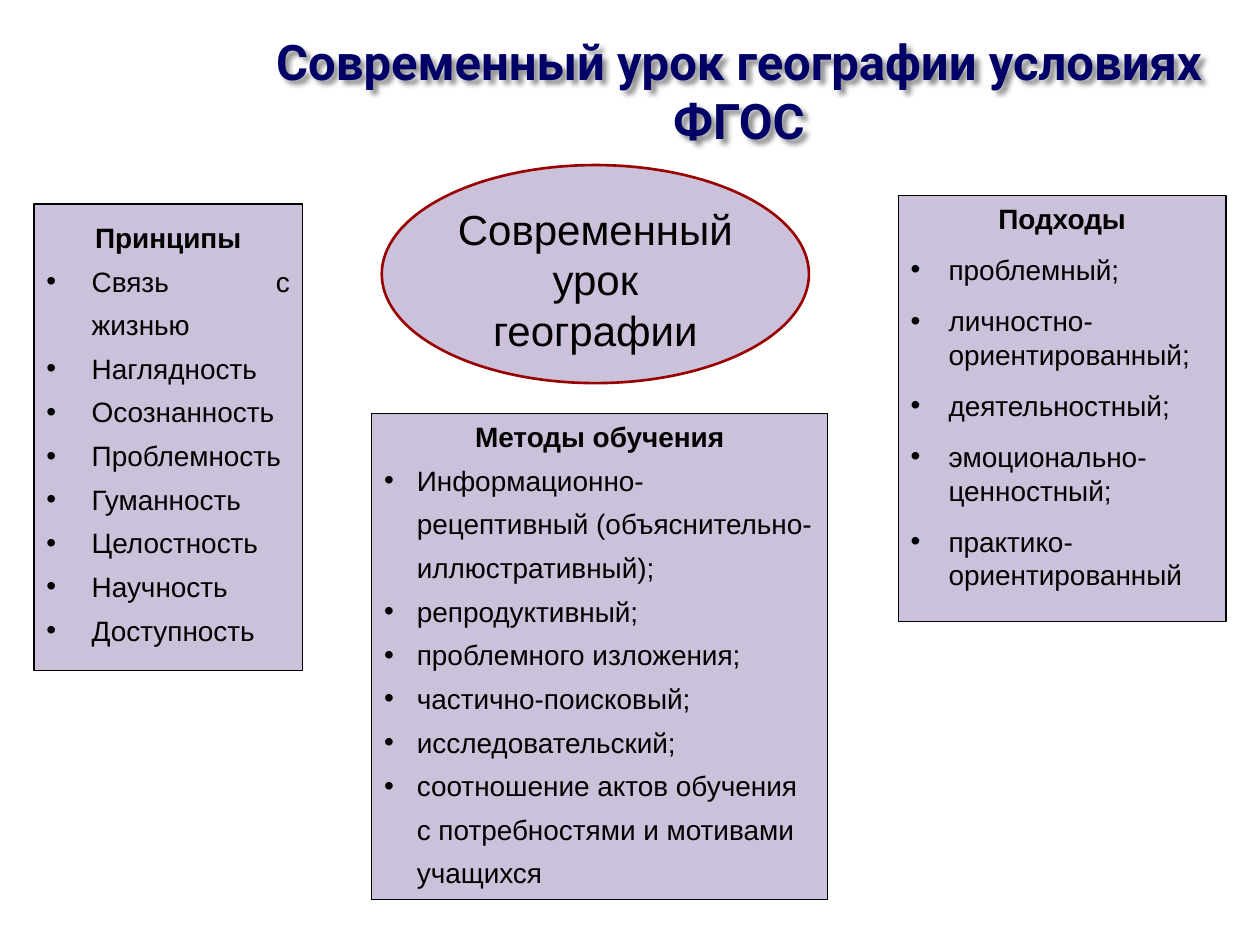
from lxml.etree import SubElement
from pptx import Presentation
from pptx.dml.color import RGBColor
from pptx.enum.shapes import MSO_SHAPE as Shape
from pptx.enum.text import MSO_ANCHOR as Anchor, PP_ALIGN as Align
from pptx.oxml.ns import qn
from pptx.util import Inches, Pt

THEME = {
    "title": RGBColor(0x00, 0x00, 0x66),
    "text": RGBColor(0x00, 0x00, 0x00),
    "panel": RGBColor(0xCC, 0xC1, 0xDA),
    "accent": RGBColor(0x99, 0x00, 0x00),
    "title_size": 28, "topic_size": 24, "body_size": 16,
    "title_font": "Roboto", "body_font": "Arial",
}

presentation = Presentation()
presentation.slide_width, presentation.slide_height = Inches(10), Inches(7.5)
column = presentation.slide_width / 100
row = presentation.slide_height / 100
slide = presentation.slides.add_slide(presentation.slide_layouts[6])


def write_text(paragraph, text, size=THEME["body_size"], font=THEME["body_font"],
               color=THEME["text"], bold=False, align=Align.LEFT,
               line_spacing=None, space_after=None, hanging=None):
    """Fill a paragraph; a hanging indent in inches makes it a bulleted one."""
    paragraph.alignment = align
    paragraph.line_spacing = line_spacing
    if space_after is not None:
        paragraph.space_after = Pt(space_after)
    if hanging:
        properties = paragraph._p.get_or_add_pPr()
        properties.set("marL", str(Inches(hanging)))
        properties.set("indent", str(-Inches(hanging)))
        SubElement(properties, qn("a:buFont"), typeface="Arial")
        SubElement(properties, qn("a:buChar"), char="•")
    run = paragraph.add_run()
    run.text = text
    run.font.size, run.font.bold = Pt(size), bold
    run.font.color.rgb = color
    run.font.name = font


def add_panel(kind, left, top, width, height, line_color, line_width):
    """Place a filled shape, measured in percent of the slide's sides."""
    shape = slide.shapes.add_shape(kind, int(left * column), int(top * row),
                                   int(width * column), int(height * row))
    shape.shadow.inherit = False
    shape.fill.solid()
    shape.fill.fore_color.rgb = THEME["panel"]
    shape.line.color.rgb = line_color
    shape.line.width = Pt(line_width)
    shape.text_frame.word_wrap = True
    shape.text_frame.vertical_anchor = Anchor.TOP
    return shape.text_frame


# Title with a soft shadow
title = slide.shapes.add_textbox(int(17.3 * column), int(3.73 * row),
                                 int(82.7 * column), int(11.6 * row))
title.text_frame.word_wrap = True
title.text_frame.vertical_anchor = Anchor.MIDDLE
write_text(title.text_frame.paragraphs[0], "Современный урок географии условиях ФГОС",
           size=THEME["title_size"], font=THEME["title_font"],
           color=THEME["title"], bold=True, align=Align.CENTER)
effects = SubElement(title._element.spPr, qn("a:effectLst"))
shadow = SubElement(effects, qn("a:outerShdw"), blurRad=str(Pt(3)), dist=str(Pt(3)),
                    dir="2700000", algn="tl", rotWithShape="0")
shadow_color = SubElement(shadow, qn("a:srgbClr"), val="000000")
SubElement(shadow_color, qn("a:alpha"), val="43000")

# Central topic
topic = add_panel(Shape.OVAL, 30.3, 17.47, 33.9, 23.07, THEME["accent"], 1.5)
write_text(topic.paragraphs[0], "Современный урок географии",
           size=THEME["topic_size"], align=Align.CENTER)

# Cards: heading, place, heading format, item format, items
cards = [
    ("Принципы", (2.7, 21.6, 21.3, 49.33),
     {"line_spacing": 1.3}, {"line_spacing": 1.3, "hanging": 0.36},
     ["Связь с жизнью", "Наглядность", "Осознанность", "Проблемность",
      "Гуманность", "Целостность", "Научность", "Доступность"]),
    ("Методы обучения", (29.5, 43.73, 36.2, 51.47),
     {}, {"line_spacing": 1.3, "hanging": 0.26},
     ["Информационно-рецептивный (объяснительно-иллюстративный);",
      "репродуктивный;", "проблемного изложения;", "частично-поисковый;",
      "исследовательский;",
      "соотношение актов обучения с потребностями и мотивами учащихся"]),
    ("Подходы", (71.3, 20.67, 26, 45.07),
     {"space_after": 10}, {"space_after": 10, "hanging": 0.3},
     ["проблемный;", "личностно-ориентированный;", "деятельностный;",
      "эмоционально-ценностный;", "практико-ориентированный"]),
]
for heading, place, heading_format, item_format, items in cards:
    card = add_panel(Shape.RECTANGLE, *place, THEME["text"], 0.75)
    write_text(card.paragraphs[0], heading, bold=True, align=Align.CENTER,
               **heading_format)
    for item in items:
        align = Align.JUSTIFY if item == "Связь с жизнью" else Align.LEFT
        write_text(card.add_paragraph(), item, align=align, **item_format)

presentation.save("out.pptx")
